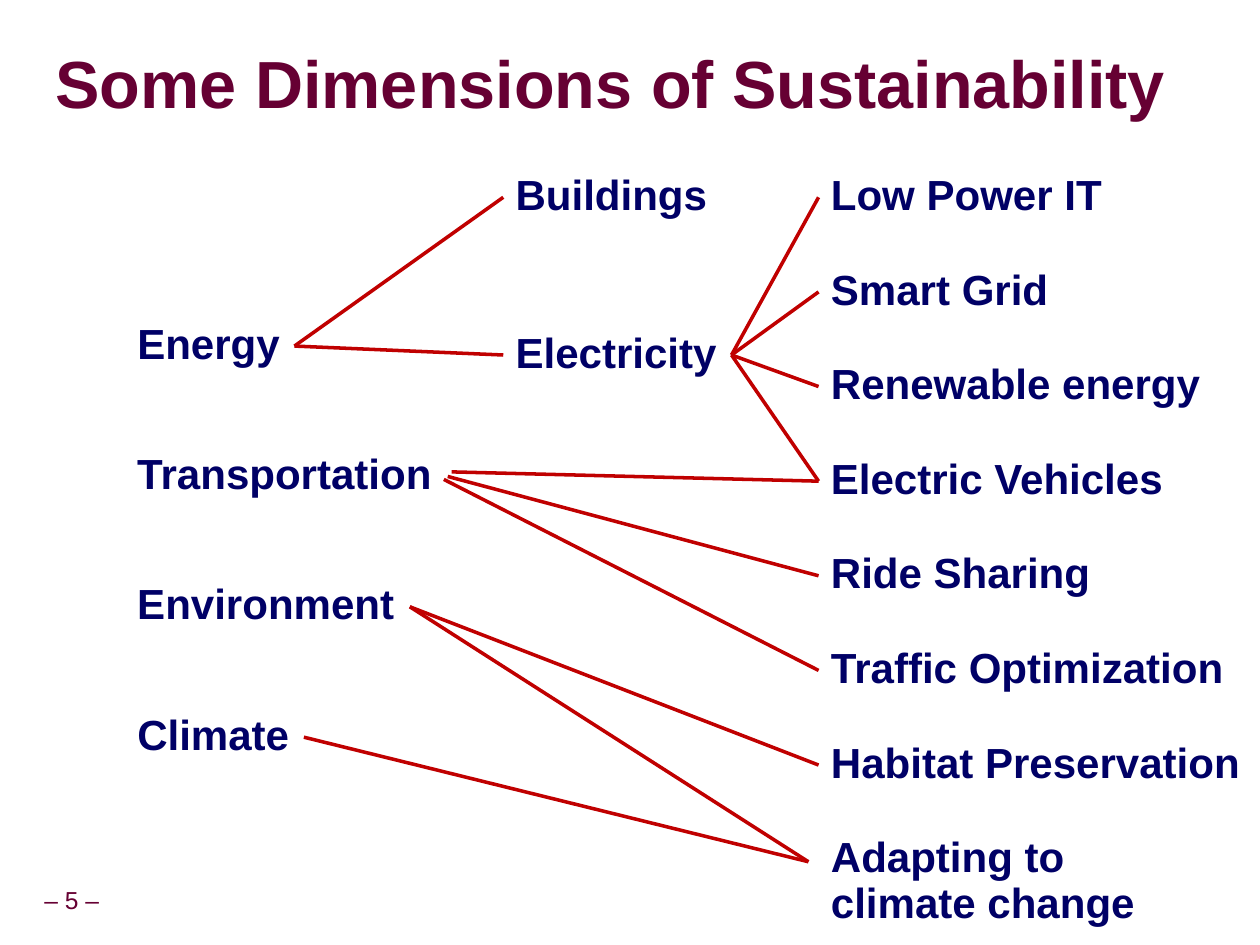
"""Build the slide that links sustainability areas to their topics."""
from dataclasses import dataclass

import lxml.etree
import pptx
import pptx.dml.color
import pptx.enum.shapes
import pptx.enum.text
import pptx.oxml
import pptx.oxml.ns
import pptx.shapes.autoshape
import pptx.slide
import pptx.util

Pt = pptx.util.Pt
qn = pptx.oxml.ns.qn
Align = pptx.enum.text.PP_ALIGN
Anchor = pptx.enum.text.MSO_ANCHOR
AutoSize = pptx.enum.text.MSO_AUTO_SIZE
Shape = pptx.shapes.autoshape.Shape

COLORS = {"title": "660033", "label": "000066", "link": "C00000", "shadow": "969696"}
FONT = "Arial"
LABEL_H, TOP = 33.6, 95.8
RIGHT, LEFT = 3, 1


@dataclass(frozen=True)
class Column:
    x: float
    y: float
    step: float
    labels: tuple[tuple[str, float], ...]


@dataclass(frozen=True)
class Link:
    source: str
    target: str
    start: tuple[float, float] | None = None
    end: tuple[float, float] | None = None


ADAPTING = "Adapting to\nclimate change"
ADAPTING_END = (461.5, 491.8)

COLUMNS = (
    Column(71.3, 180.7, 74.4, (
        ("Energy", 96.8), ("Transportation", 184.3),
        ("Environment", 162.7), ("Climate", 102.2))),
    Column(287.3, TOP, 90, (("Buildings", 124.6), ("Electricity", 130.3))),
    Column(467.3, TOP, 54, (
        ("Low Power IT", 170.6), ("Smart Grid", 139.7), ("Renewable energy", 227.5),
        ("Electric Vehicles", 205.9), ("Ride Sharing", 164.2),
        ("Traffic Optimization", 240.5), ("Habitat Preservation", 250.6),
        (ADAPTING, 189.4))),
)

LINKS = (
    Link("Energy", "Buildings"),
    Link("Energy", "Electricity"),
    Link("Transportation", "Electric Vehicles", start=(257.8, 269.3)),
    Link("Transportation", "Ride Sharing"),
    Link("Transportation", "Traffic Optimization", start=(253.4, 273.6)),
    Link("Environment", "Habitat Preservation"),
    Link("Environment", ADAPTING, end=ADAPTING_END),
    Link("Climate", ADAPTING, end=ADAPTING_END),
    Link("Electricity", "Low Power IT"),
    Link("Electricity", "Smart Grid"),
    Link("Electricity", "Renewable energy"),
    Link("Electricity", "Electric Vehicles"),
)


def rgb(name: str) -> pptx.dml.color.RGBColor:
    """Return a named colour."""
    return pptx.dml.color.RGBColor.from_string(COLORS[name])


def add_text(slide: pptx.slide.Slide, text: str, x: float, y: float, w: float, h: float, *,
             size: float = 24, color: str = "label", bold: bool = True,
             spacing: float = 0.9, align: Align = Align.LEFT, anchor: Anchor = Anchor.TOP,
             insets: tuple[float, float] = (7.2, 3.6), grow: bool = True) -> Shape:
    """Add a text box with one paragraph for each line of text."""
    sp = slide.shapes.add_textbox(Pt(x), Pt(y), Pt(w), Pt(h))
    tf = sp.text_frame
    tf.text = text
    tf.word_wrap = not grow
    tf.auto_size = AutoSize.SHAPE_TO_FIT_TEXT if grow else AutoSize.NONE
    tf.vertical_anchor = anchor
    tf.margin_left = tf.margin_right = Pt(insets[0])
    tf.margin_top = tf.margin_bottom = Pt(insets[1])
    for p in tf.paragraphs:
        p.alignment = align
        p.line_spacing = spacing
        for r in p.runs:
            r.font.name = FONT
            r.font.size = Pt(size)
            r.font.bold = bold
            r.font.color.rgb = rgb(color)
    return sp


def add_text_shadow(sp: Shape) -> None:
    """Cast a shadow from the letters of a text box."""
    for fill in sp.text_frame._txBody.iter(qn("a:solidFill")):
        effects = lxml.etree.Element(qn("a:effectLst"))
        shadow = lxml.etree.SubElement(
            effects, qn("a:outerShdw"), dist=str(Pt(3)), dir="2700000", algn="tl")
        lxml.etree.SubElement(shadow, qn("a:srgbClr"), val=COLORS["shadow"])
        fill.addnext(effects)


def add_link(slide: pptx.slide.Slide, link: Link, labels: dict[str, Shape]) -> None:
    """Draw a line from one label to another, joined where no point is given."""
    start, end = link.start or (0, 0), link.end or (0, 0)
    line = slide.shapes.add_connector(
        pptx.enum.shapes.MSO_CONNECTOR.STRAIGHT, *(Pt(v) for v in start + end))
    if link.start is None:
        line.begin_connect(labels[link.source], RIGHT)
    if link.end is None:
        line.end_connect(labels[link.target], LEFT)
    line.line.color.rgb = rgb("link")
    line.line.width = Pt(2)
    lxml.etree.SubElement(line._element.spPr, qn("a:effectLst"))


def main() -> None:
    """Build and save the slide."""
    prs = pptx.Presentation()
    prs.slide_width, prs.slide_height = Pt(719.3), Pt(539.3)
    slide = prs.slides.add_slide(prs.slide_layouts[6])

    add_text(slide, "– 5 –", 17.3, 503.3, 47.5, 22.3, size=14, color="title", bold=False,
             align=Align.CENTER, anchor=Anchor.MIDDLE, insets=(3.6, 3.6))
    title = add_text(slide, "Some Dimensions of Sustainability", 31.7, 19.4, 685.4, 61.2,
                     size=38, color="title", spacing=0.87, anchor=Anchor.MIDDLE,
                     insets=(0, 0), grow=False)
    add_text_shadow(title)

    labels: dict[str, Shape] = {}
    for column in COLUMNS:
        for i, (text, width) in enumerate(column.labels):
            height = LABEL_H + 26.2 * text.count("\n")
            labels[text] = add_text(
                slide, text, column.x, column.y + i * column.step, width, height)
    for link in LINKS:
        add_link(slide, link, labels)

    prs.save("out.pptx")


if __name__ == "__main__":
    main()
